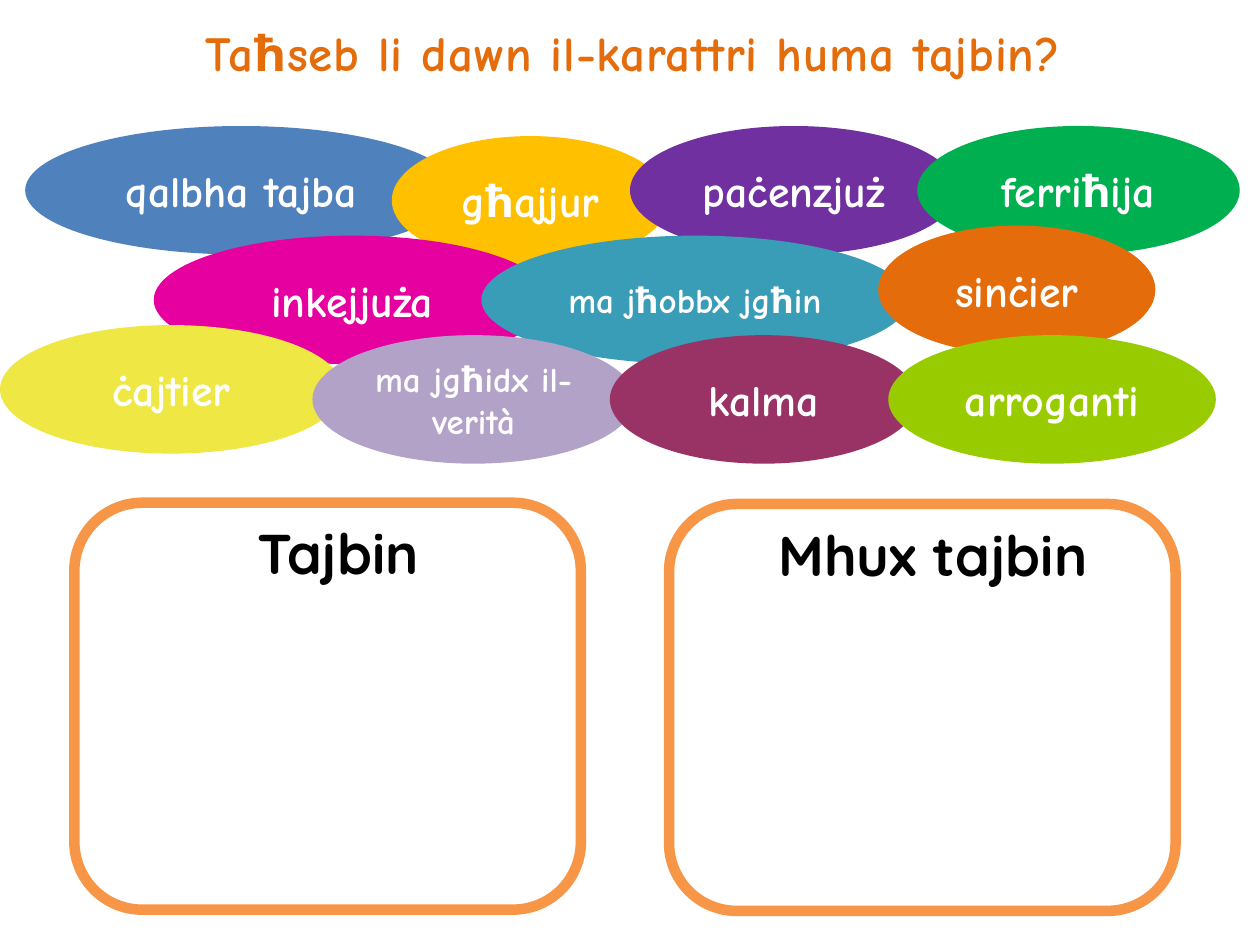
from dataclasses import dataclass

from pptx import Presentation
from pptx.dml.color import RGBColor
from pptx.enum.shapes import MSO_SHAPE
from pptx.enum.text import MSO_ANCHOR, MSO_AUTO_SIZE, PP_ALIGN
from pptx.shapes.autoshape import Shape
from pptx.slide import Slide
from pptx.util import Inches, Pt

OVAL = MSO_SHAPE.OVAL
ROUNDED = MSO_SHAPE.ROUNDED_RECTANGLE
TOP = MSO_ANCHOR.TOP
MIDDLE = MSO_ANCHOR.MIDDLE
CENTER = PP_ALIGN.CENTER
GROW = MSO_AUTO_SIZE.SHAPE_TO_FIT_TEXT
FIXED = MSO_AUTO_SIZE.NONE

WHITE = RGBColor(0xFF, 0xFF, 0xFF)
BLACK = RGBColor(0x00, 0x00, 0x00)
BLUE = RGBColor(0x4F, 0x81, 0xBD)
AMBER = RGBColor(0xFF, 0xC0, 0x00)
PURPLE = RGBColor(0x70, 0x30, 0xA0)
GREEN = RGBColor(0x00, 0xB0, 0x50)
PINK = RGBColor(0xE6, 0x00, 0x9F)
TEAL = RGBColor(0x3A, 0x9D, 0xB8)
ORANGE = RGBColor(0xE4, 0x6C, 0x0A)
YELLOW = RGBColor(0xEF, 0xE7, 0x43)
LILAC = RGBColor(0xB3, 0xA2, 0xC7)
PLUM = RGBColor(0x99, 0x33, 0x66)
LIME = RGBColor(0x99, 0xCC, 0x00)
FRAME_ORANGE = RGBColor(0xF7, 0x96, 0x46)

OVAL_HEIGHT = 1.02
TITLE_FORMAT = {"name": "Comic Neue", "size": Pt(28), "bold": True}
HEADING_FORMAT = {"name": "Quicksand", "size": Pt(32), "bold": True}


@dataclass
class Trait:
    text: str
    left: float
    top: float
    width: float
    color: RGBColor
    size: int = 25


@dataclass
class Category:
    heading: str
    left: float
    top: float


TRAITS = [
    Trait("qalbha tajba", 0.2, 1, 3.43, BLUE),
    Trait("għajjur", 3.11, 1.08, 2.2, AMBER),
    Trait("paċenzjuż", 5, 1, 2.6, PURPLE),
    Trait("ferriħija", 7.28, 1, 2.56, GREEN),
    Trait("inkejjuża", 1.22, 1.87, 3.15, PINK),
    Trait("ma jħobbx jgħin", 3.82, 1.87, 3.39, TEAL, 20),
    Trait("sinċier", 6.97, 1.79, 2.2, ORANGE),
    Trait("ċajtier", 0, 2.58, 2.72, YELLOW),
    Trait("ma jgħidx il-verità", 2.48, 2.66, 2.56, LILAC, 20),
    Trait("kalma", 4.84, 2.66, 2.44, PLUM),
    Trait("arroganti", 7.05, 2.66, 2.6, LIME),
]
CATEGORIES = [Category("Tajbin", 0.59, 3.99), Category("Mhux tajbin", 5.31, 4)]


def write_text(box: Shape, text: str, formats: dict, color: RGBColor,
               anchor: MSO_ANCHOR, fit: MSO_AUTO_SIZE) -> None:
    frame = box.text_frame
    for name, value in {"word_wrap": True, "vertical_anchor": anchor, "auto_size": fit}.items():
        setattr(frame, name, value)
    para = frame.paragraphs[0]
    para.alignment = CENTER
    span = para.add_run()
    span.text = text
    for name, value in formats.items():
        setattr(span.font, name, value)
    span.font.color.rgb = color


def add_filled_shape(page: Slide, kind: MSO_SHAPE, left: float, top: float,
                     width: float, height: float, color: RGBColor) -> Shape:
    shape = page.shapes.add_shape(kind, Inches(left), Inches(top), Inches(width), Inches(height))
    shape.shadow.inherit = False
    shape.fill.solid()
    shape.fill.fore_color.rgb = color
    shape.line.fill.background()
    return shape


def draw_title(page: Slide) -> None:
    title = page.shapes.title
    position = {"left": 0.2, "top": 0.13, "width": 9.8, "height": 0.57}
    for name, value in position.items():
        setattr(title, name, Inches(value))
    write_text(title, "Taħseb li dawn il-karattri huma tajbin? ", TITLE_FORMAT, ORANGE, TOP, GROW)
    span = title.text_frame.paragraphs[0].runs[0]
    span.font._element.set("spc", "50")


def draw_trait(page: Slide, trait: Trait) -> None:
    oval = add_filled_shape(page, OVAL, trait.left, trait.top, trait.width, OVAL_HEIGHT, trait.color)
    formats = {"name": "Comic Neue", "size": Pt(trait.size), "bold": True}
    write_text(oval, trait.text, formats, WHITE, MIDDLE, FIXED)


def draw_category(page: Slide, category: Category) -> None:
    frame = add_filled_shape(page, ROUNDED, category.left, category.top, 4.02, 3.23, WHITE)
    frame.line.color.rgb = FRAME_ORANGE
    frame.line.width = Pt(6)
    heading = page.shapes.add_textbox(Inches(category.left + 0.48), Inches(category.top + 0.08),
                                      Inches(3.23), Inches(0.64))
    write_text(heading, category.heading, HEADING_FORMAT, BLACK, TOP, GROW)


def main() -> None:
    deck = Presentation()
    deck.slide_width = Inches(10)
    deck.slide_height = Inches(7.5)
    page = deck.slides.add_slide(deck.slide_layouts[5])
    draw_title(page)
    for trait in TRAITS:
        draw_trait(page, trait)
    for category in CATEGORIES:
        draw_category(page, category)
    deck.save("out.pptx")


if __name__ == "__main__":
    main()
